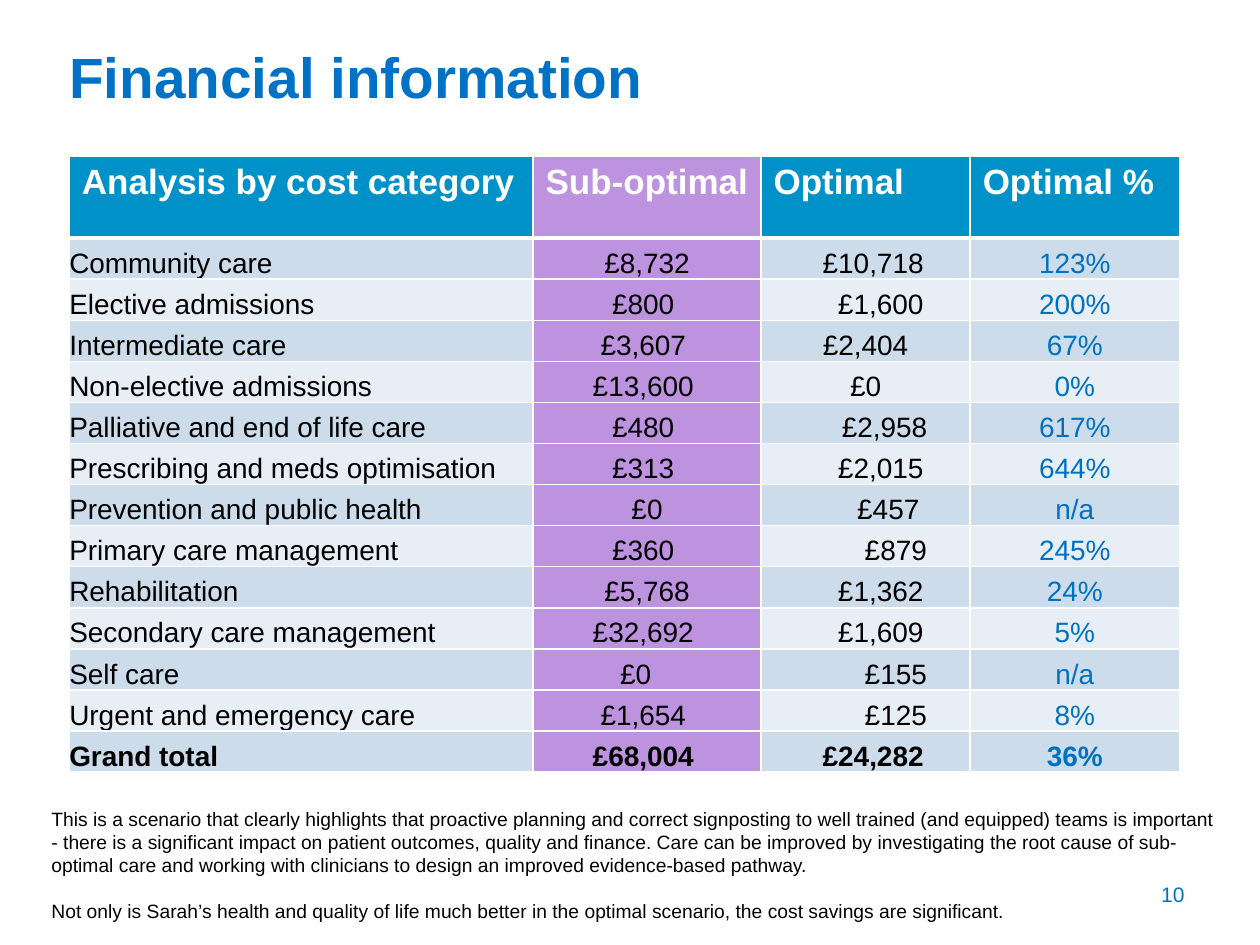
from dataclasses import dataclass

import pptx
import pptx.dml.color
import pptx.enum.text
import pptx.oxml
import pptx.oxml.ns
import pptx.shapes.autoshape
import pptx.table
import pptx.text.text
import pptx.util

Inches = pptx.util.Inches
Align = pptx.enum.text.PP_ALIGN
Anchor = pptx.enum.text.MSO_ANCHOR

FONT = "Arial"
BLACK, WHITE = "000000", "FFFFFF"
TITLE_BLUE, PERCENT_BLUE = "0072C6", "0070C0"
HEADER_BLUE, PURPLE = "0091C9", "BD92DE"
BANDS = ("CCDCEB", "E7EEF5")
SPACE_WIDTH = 0.06


@dataclass(frozen=True)
class Amount:
    text: str
    shift: int = 0


@dataclass(frozen=True)
class CostRow:
    category: str
    suboptimal: Amount
    optimal: Amount
    percent: str
    bold: bool = False


HEADINGS = ("Analysis by cost category", "Sub-optimal", "Optimal", "Optimal %")
COLUMN_WIDTHS = (3.68, 1.81, 1.66, 1.66)
HEADER_HEIGHT, TABLE_HEIGHT = 0.65, 4.89
COSTS = (
    CostRow("Community care", Amount("£8,732"), Amount("£10,718", 2), "123%"),
    CostRow("Elective admissions", Amount("£800", -1), Amount("£1,600", 4), "200%"),
    CostRow("Intermediate care", Amount("£3,607", -1), Amount("£2,404"), "67%"),
    CostRow("Non-elective admissions", Amount("£13,600", -1), Amount("£0"), "0%"),
    CostRow("Palliative and end of life care", Amount("£480", -1), Amount("£2,958", 5), "617%"),
    CostRow("Prescribing and meds optimisation", Amount("£313", -1), Amount("£2,015", 4), "644%"),
    CostRow("Prevention and public health", Amount("£0"), Amount("£457", 6), "n/a"),
    CostRow("Primary care management", Amount("£360", -1), Amount("£879", 8), "245%"),
    CostRow("Rehabilitation", Amount("£5,768"), Amount("£1,362", 4), "24%"),
    CostRow("Secondary care management", Amount("£32,692", -1), Amount("£1,609", 4), "5%"),
    CostRow("Self care", Amount("£0", -3), Amount("£155", 8), "n/a"),
    CostRow("Urgent and emergency care", Amount("£1,654", -1), Amount("£125", 8), "8%"),
    CostRow("Grand total", Amount("£68,004", -1), Amount("£24,282", 2), "36%", bold=True),
)
COMMENTARY = (
    "This is a scenario that clearly highlights that proactive planning and correct "
    "signposting to well trained (and equipped) teams is important - there is a significant "
    "impact on patient outcomes, quality and finance. Care can be improved by investigating "
    "the root cause of sub-optimal care and working with clinicians to design an improved "
    "evidence-based pathway.",
    "Not only is Sarah’s health and quality of life much better in the optimal scenario, "
    "the cost savings are significant.",
)


def rgb(color: str) -> pptx.dml.color.RGBColor:
    return pptx.dml.color.RGBColor.from_string(color)


def write(
    para: pptx.text.text._Paragraph,
    text: str,
    *,
    size: float,
    color: str = BLACK,
    bold: bool = False,
    align: Align = Align.LEFT,
    before: float = 0,
) -> None:
    para.alignment = align
    para.space_before = pptx.util.Pt(before)
    span = para.add_run()
    span.text = text
    span.font.name = FONT
    span.font.size = pptx.util.Pt(size)
    span.font.bold = bold
    span.font.color.rgb = rgb(color)


def draw_borders(cell: pptx.table._Cell, top: float, bottom: float) -> None:
    properties = cell._tc.get_or_add_tcPr()
    for side, points in (("L", 1), ("R", 1), ("T", top), ("B", bottom)):
        properties.append(pptx.oxml.parse_xml(
            f'<a:ln{side} {pptx.oxml.ns.nsdecls("a")} w="{pptx.util.Pt(points)}">'
            f'<a:solidFill><a:srgbClr val="{WHITE}"/></a:solidFill></a:ln{side}>'
        ))


def paint(cell: pptx.table._Cell, color: str) -> None:
    cell.fill.solid()
    cell.fill.fore_color.rgb = rgb(color)


def draw_header(table: pptx.table.Table) -> None:
    for column, heading in enumerate(HEADINGS):
        cell = table.cell(0, column)
        draw_borders(cell, top=1, bottom=3)
        paint(cell, PURPLE if column == 1 else HEADER_BLUE)
        write(cell.text_frame.paragraphs[0], heading, size=20, color=WHITE, bold=True)


def draw_cost_row(table: pptx.table.Table, row: int, cost: CostRow) -> None:
    entries = (Amount(cost.category), cost.suboptimal, cost.optimal, Amount(cost.percent))
    for column, entry in enumerate(entries):
        cell = table.cell(row, column)
        draw_borders(cell, top=3 if row == 1 else 1, bottom=1)
        paint(cell, PURPLE if column == 1 else BANDS[(row - 1) % 2])
        cell.vertical_anchor = Anchor.BOTTOM
        cell.margin_top = cell.margin_bottom = 0
        cell.margin_left = Inches(max(entry.shift, 0) * SPACE_WIDTH)
        cell.margin_right = Inches(max(-entry.shift, 0) * SPACE_WIDTH)
        write(
            cell.text_frame.paragraphs[0],
            entry.text,
            size=16,
            color=PERCENT_BLUE if column == 3 else BLACK,
            bold=cost.bold,
            align=Align.CENTER if column else Align.LEFT,
        )


def add_box(
    page: pptx.slide.Slide, left: float, top: float, width: float, height: float
) -> pptx.text.text.TextFrame:
    box = page.shapes.add_textbox(Inches(left), Inches(top), Inches(width), Inches(height))
    box.text_frame.word_wrap = True
    return box.text_frame


def main() -> None:
    deck = pptx.Presentation()
    deck.slide_width, deck.slide_height = Inches(10), Inches(7.5)
    page = deck.slides.add_slide(deck.slide_layouts[5])

    title = page.shapes.title
    title.left, title.top = Inches(0.45), Inches(0.33)
    title.width, title.height = Inches(8.05), Inches(0.55)
    title.text_frame.auto_size = pptx.enum.text.MSO_AUTO_SIZE.NONE
    title.text_frame.vertical_anchor = Anchor.MIDDLE
    write(title.text_frame.paragraphs[0], "Financial information",
          size=32.4, color=TITLE_BLUE, bold=True)

    table = page.shapes.add_table(
        len(COSTS) + 1, len(HEADINGS),
        Inches(0.55), Inches(1.24), Inches(sum(COLUMN_WIDTHS)), Inches(TABLE_HEIGHT),
    ).table
    for column, width in zip(table.columns, COLUMN_WIDTHS):
        column.width = Inches(width)
    for row in table.rows:
        row.height = Inches((TABLE_HEIGHT - HEADER_HEIGHT) / len(COSTS))
    table.rows[0].height = Inches(HEADER_HEIGHT)
    draw_header(table)
    for row, cost in enumerate(COSTS, start=1):
        draw_cost_row(table, row, cost)

    commentary = add_box(page, 0.31, 6.36, 9.47, 1.23)
    write(commentary.paragraphs[0], COMMENTARY[0], size=11)
    write(commentary.add_paragraph(), COMMENTARY[1], size=11, before=13)

    number = add_box(page, 7.17, 6.95, 2.33, 0.4)
    write(number.paragraphs[0], "10", size=12, color=TITLE_BLUE, align=Align.RIGHT)

    deck.save("out.pptx")


if __name__ == "__main__":
    main()
